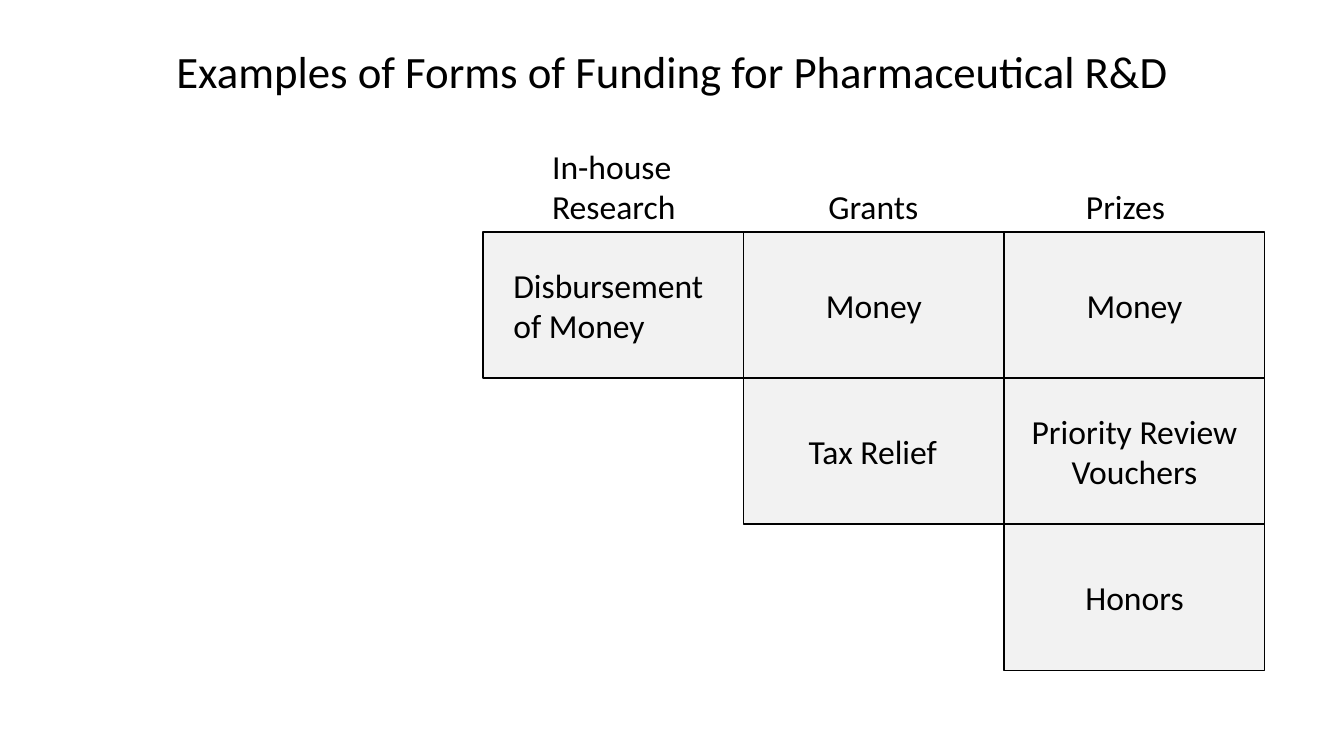
from pptx import Presentation
from pptx.dml.color import RGBColor
from pptx.enum.shapes import MSO_SHAPE
from pptx.enum.text import MSO_ANCHOR, MSO_AUTO_SIZE, PP_ALIGN
from pptx.util import Inches, Pt

BLACK, GREY = "000000", "F2F2F2"
GRID_LEFT, GRID_TOP = 4.79, 2.3
COL_W, ROW_H = 2.585, 1.45
LINE_H, PADDING = 0.4, 0.1

CELLS = [
    ["", "Money", "Money"],
    [None, "", "Priority Review Vouchers"],
    [None, None, "Honors"],
]
HEADERS = [
    (["In-house", "Research"], 1.47, 0.03),
    (["Grants"], 1.1, 0),
    (["Prizes"], 1, -0.08),
]
CELL_LABELS = [
    (["Disbursement", "of Money"], 2.18, 0, 0),
    (["Tax Relief"], 1.49, 1, 1),
]


def color(value):
    return RGBColor.from_string(value)


def add_run(p, text, size):
    r = p.add_run()
    r.text = text
    r.font.name = "Calibri"
    r.font.size = Pt(size)
    r.font.color.rgb = color(BLACK)


def add_title(s, left, top, width, height):
    sp = s.shapes.title
    sp.left, sp.top = Inches(left), Inches(top)
    sp.width, sp.height = Inches(width), Inches(height)
    tf = sp.text_frame
    tf.vertical_anchor = MSO_ANCHOR.MIDDLE
    p = tf.paragraphs[0]
    p.alignment = PP_ALIGN.CENTER
    p.line_spacing = 0.9
    add_run(p, "Examples of Forms of Funding for Pharmaceutical R&D", 32)


def add_cell(s, text, left, top):
    sp = s.shapes.add_shape(MSO_SHAPE.RECTANGLE, Inches(left), Inches(top),
                            Inches(COL_W), Inches(ROW_H))
    sp.shadow.inherit = False
    sp.fill.solid()
    sp.fill.fore_color.rgb = color(GREY)
    sp.line.color.rgb = color(BLACK)
    sp.line.width = Pt(1)
    if text:
        tf = sp.text_frame
        tf.word_wrap = True
        tf.vertical_anchor = MSO_ANCHOR.MIDDLE
        p = tf.paragraphs[0]
        p.alignment = PP_ALIGN.CENTER
        add_run(p, text, 24)


def label_height(lines):
    return PADDING + LINE_H * len(lines)


def add_label(s, lines, center, top, width):
    sp = s.shapes.add_textbox(Inches(center - width / 2), Inches(top),
                              Inches(width), Inches(label_height(lines)))
    tf = sp.text_frame
    tf.word_wrap = False
    tf.auto_size = MSO_AUTO_SIZE.SHAPE_TO_FIT_TEXT
    for i, line in enumerate(lines):
        p = tf.paragraphs[0] if i == 0 else tf.add_paragraph()
        add_run(p, line, 24)


def add_grid(s, left, top):
    for row, texts in enumerate(CELLS):
        for col, text in enumerate(texts):
            if text is not None:
                add_cell(s, text, left + col * COL_W, top + row * ROW_H)
    for col, (lines, width, shift) in enumerate(HEADERS):
        center = left + (col + 0.5) * COL_W + shift
        add_label(s, lines, center, top - label_height(lines), width)
    for lines, width, col, row in CELL_LABELS:
        middle = top + (row + 0.5) * ROW_H
        add_label(s, lines, left + (col + 0.5) * COL_W,
                  middle - label_height(lines) / 2, width)


def main():
    prs = Presentation()
    prs.slide_width, prs.slide_height = Inches(13.33), Inches(7.5)
    s = prs.slides.add_slide(prs.slide_layouts.get_by_name("Title Only"))
    add_title(s, 0.92, 0.01, 11.5, 1.45)
    add_grid(s, GRID_LEFT, GRID_TOP)
    prs.save("out.pptx")


if __name__ == "__main__":
    main()
